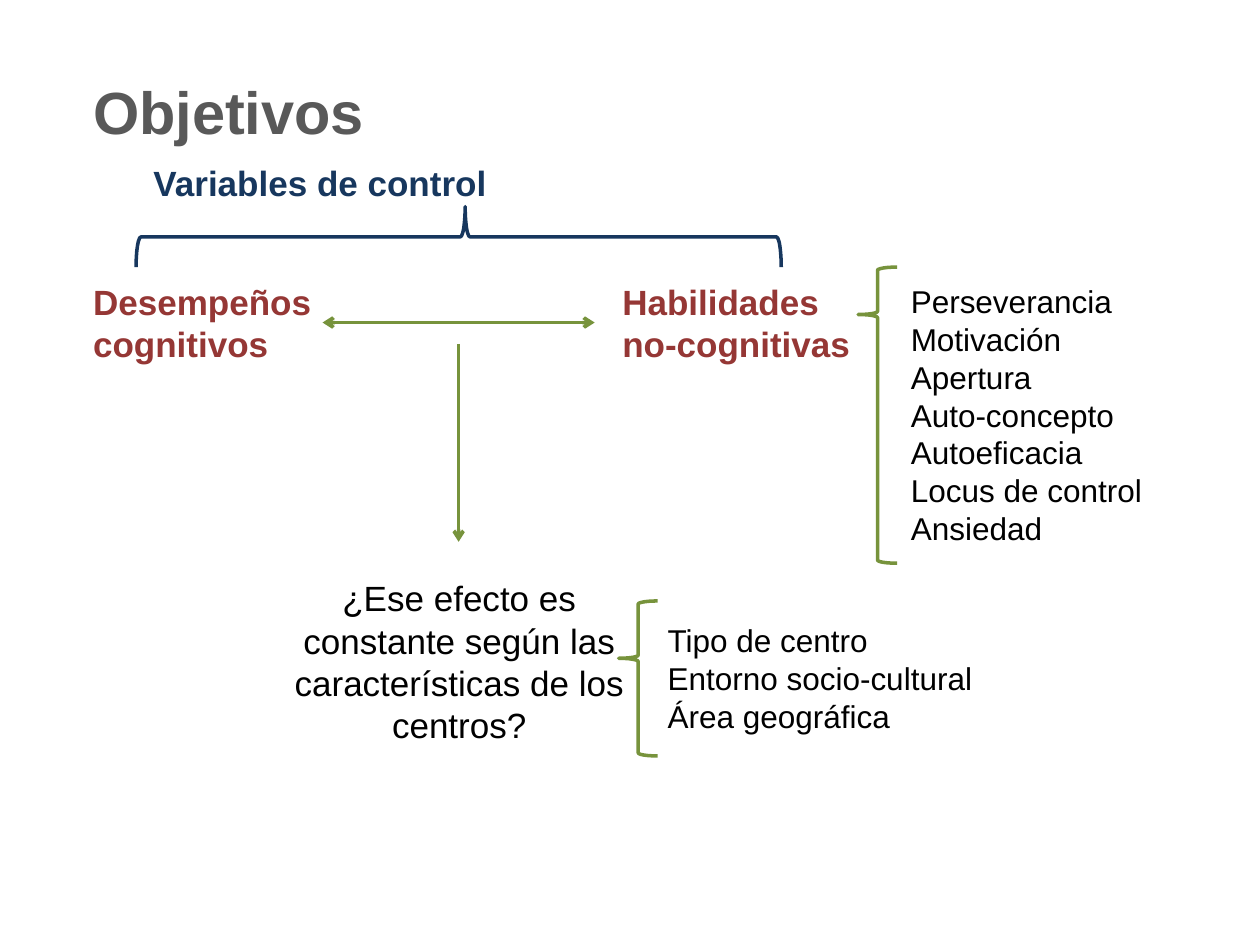
from lxml.etree import SubElement
from pptx import Presentation
from pptx.dml.color import RGBColor
from pptx.enum.shapes import MSO_CONNECTOR, MSO_SHAPE
from pptx.enum.text import MSO_ANCHOR, PP_ALIGN
from pptx.oxml.ns import qn
from pptx.util import Pt

PX = 9144  # 100 px to the inch
FONT = "Arial"
GREY, RED, GREEN, NAVY, BLACK = "595959", "953735", "77933C", "17375E", "000000"


def px(*lengths):
    return [length * PX for length in lengths]


def color(hex_code):
    return RGBColor.from_string(hex_code)


def format_text(frame, lines, size, hex_code, bold=False, align=PP_ALIGN.LEFT):
    frame.text = "\n".join(lines)
    for paragraph in frame.paragraphs:
        paragraph.alignment = align
        for run in paragraph.runs:
            run.font.name, run.font.size, run.font.bold = FONT, Pt(size), bold
            run.font.color.rgb = color(hex_code)


def add_text(slide, box, lines, size, hex_code, wrap=True, **style):
    frame = slide.shapes.add_textbox(*px(*box)).text_frame
    frame.word_wrap = wrap
    format_text(frame, lines, size, hex_code, **style)


def add_brace(slide, box, hex_code, point, rotation=0):
    brace = slide.shapes.add_shape(MSO_SHAPE.LEFT_BRACE, *px(*box))
    brace.adjustments[0], brace.adjustments[1] = 0.08, point
    brace.rotation = rotation
    brace.shadow.inherit = False
    brace.fill.background()
    brace.line.color.rgb = color(hex_code)
    brace.line.width = Pt(2)


def add_arrow(slide, start, end, both_ends=False):
    arrow = slide.shapes.add_connector(MSO_CONNECTOR.STRAIGHT, *px(*start, *end))
    arrow.line.color.rgb = color(GREEN)
    arrow.line.width = Pt(2)
    line = arrow.line._get_or_add_ln()
    for tag in ("a:headEnd", "a:tailEnd") if both_ends else ("a:tailEnd",):
        SubElement(line, qn(tag)).set("type", "arrow")
    SubElement(arrow._element.spPr, qn("a:effectLst"))


def place_title(slide, box, text):
    title = slide.shapes.title
    title.left, title.top, title.width, title.height = px(*box)
    title.text_frame.vertical_anchor = MSO_ANCHOR.MIDDLE
    format_text(title.text_frame, [text], 34, GREY, bold=True)


def add_control_variables(slide, box):
    left, top, width, height = box
    add_text(slide, (left + 4, top, 287, 44), ["Variables de control"], 20, NAVY,
             wrap=False, bold=True)
    # The brace lies on its side: its length spans the box, turned about its centre
    depth = 48
    brace_left = left + (width - depth) // 2
    brace_top = top + height - (depth + width) // 2
    add_brace(slide, (brace_left, brace_top, depth, width), NAVY, 0.49, rotation=90)


def add_relation(slide, box):
    left, top, width, height = box
    label_width = 205
    for label_left, label in ((left, "Desempeños cognitivos"),
                              (left + width - label_width, "Habilidades no-cognitivas")):
        add_text(slide, (label_left, top, label_width, 77), [label], 20, RED, bold=True)
    middle = top + 38
    add_arrow(slide, (left + 192, middle), (left + 408, middle), both_ends=True)
    add_arrow(slide, (left + 300, top + 55), (left + 300, top + height))


def add_braced_list(slide, box, point, items, text_offset):
    left, top, width, height = box
    add_brace(slide, (left, top, 31, height), GREEN, point)
    text_left, text_top = text_offset
    add_text(slide, (left + text_left, top + text_top, width - text_left,
                     height - 2 * text_top), items, 18, BLACK, wrap=False)


def add_question(slide, box):
    add_text(slide, box,
             ["¿Ese efecto es constante según las características de los centros?"],
             20, BLACK, align=PP_ALIGN.CENTER)


def main():
    presentation = Presentation()
    presentation.slide_width, presentation.slide_height = px(1000, 750)
    slide = presentation.slides.add_slide(presentation.slide_layouts[5])

    place_title(slide, (64, 52, 677, 71), "Objetivos")
    add_control_variables(slide, (108, 123, 512, 89))
    add_relation(slide, (64, 218, 625, 212))

    # Non-cognitive skills
    add_braced_list(slide, (681, 212, 237, 235), 0.16,
                    ["Perseverancia", "Motivación", "Apertura", "Auto-concepto",
                     "Autoeficacia", "Locus de control", "Ansiedad"], (32, 7))

    # School characteristics
    add_question(slide, (207, 453, 315, 145))
    add_braced_list(slide, (491, 477, 300, 123), 0.37,
                    ["Tipo de centro", "Entorno socio-cultural", "Área geográfica"],
                    (29, 11))

    presentation.save("out.pptx")


if __name__ == "__main__":
    main()
